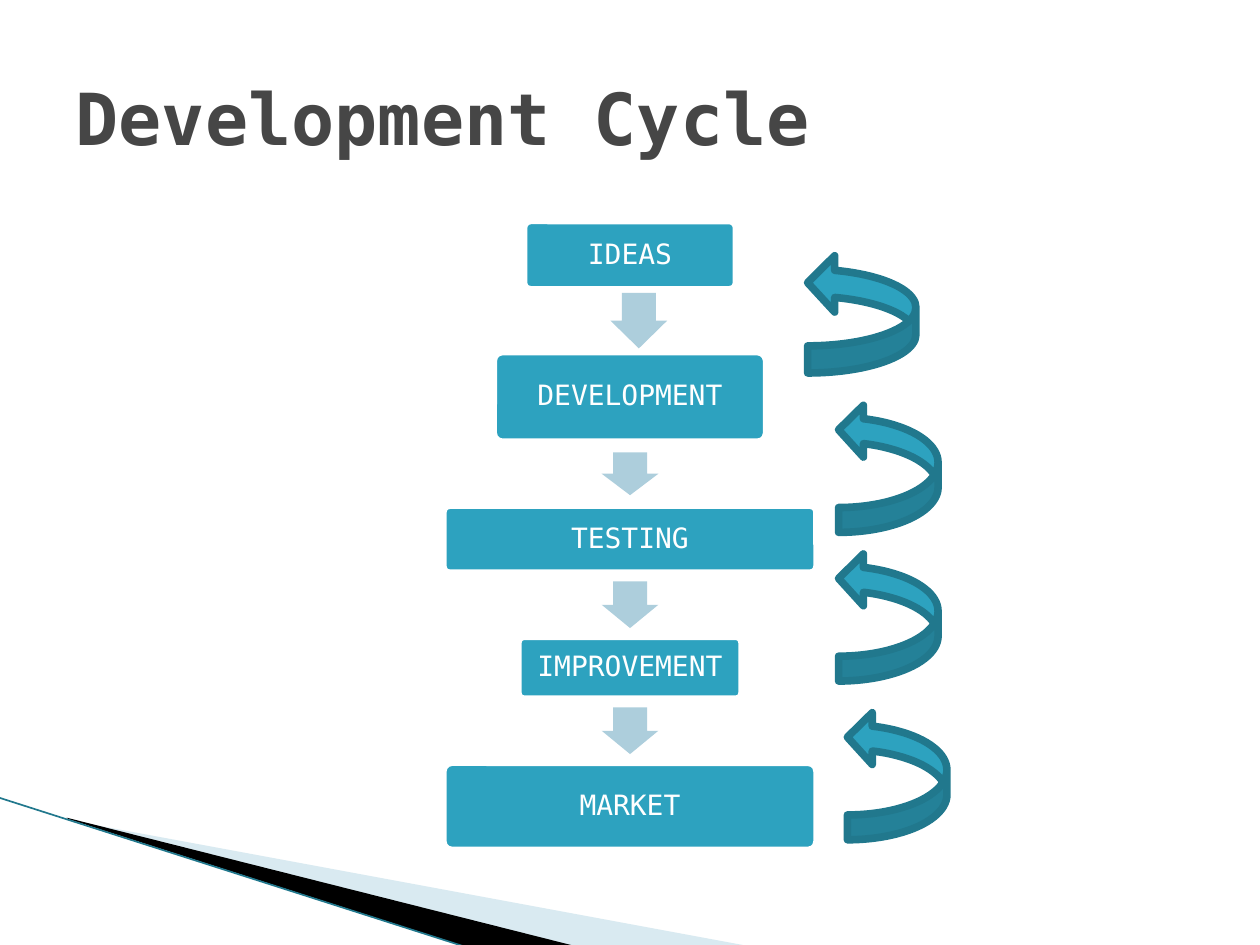
from itertools import pairwise

from lxml.etree import SubElement
from pptx import Presentation
from pptx.dml.color import RGBColor
from pptx.enum.shapes import MSO_CONNECTOR as Connector, MSO_SHAPE as Preset
from pptx.enum.text import MSO_ANCHOR as Anchor, PP_ALIGN as Align
from pptx.oxml.ns import qn
from pptx.util import Inches, Pt

TEAL = RGBColor(0x2D, 0xA2, 0xBF)
DARK_TEAL = RGBColor(0x21, 0x78, 0x8D)
PALE_TEAL = RGBColor(0xAD, 0xCE, 0xDC)
MIST = RGBColor(0xA0, 0xCB, 0xDC)
GREY = RGBColor(0x46, 0x46, 0x46)
BLACK = RGBColor(0, 0, 0)
WHITE = RGBColor(0xFF, 0xFF, 0xFF)

MIDDLE = 50
STAGES = [
    ("IDEAS", 17.5, 16.9, 5.5),
    ("DEVELOPMENT", 27.9, 21.7, 7.2),
    ("TESTING", 40.1, 29.7, 5.4),
    ("IMPROVEMENT", 50.5, 17.8, 5),
    ("MARKET", 60.5, 29.7, 7),
]
STEP_ARROWS = [(50.7, 4.4), (MIDDLE, 3.4), (MIDDLE, 3.7), (MIDDLE, 3.7)]
RETURN_ARROWS = [
    (68.4, 24.9, 9.4, 8.6),
    (70.5, 37.15, 10.2, 7.9),
    (70.5, 48.95, 10.2, 7.9),
    (71.2, 61.55, 10.2, 7.9),
]


class CycleSlide:
    """Draws styled elements on a grid of 100 columns and 75 rows."""

    font_name = "DejaVu Sans Mono"
    outline = Pt(4.33)

    def __init__(self, presentation):
        self.unit = presentation.slide_width / 100
        self.slide = presentation.slides.add_slide(presentation.slide_layouts[5])

    def grid(self, *lengths):
        return [round(length * self.unit) for length in lengths]

    def label(self, shape, text, size, color, align, bold=False):
        frame = shape.text_frame
        frame.text = text
        frame.word_wrap = True
        frame.vertical_anchor = Anchor.MIDDLE
        paragraph = frame.paragraphs[0]
        paragraph.alignment = align
        font = paragraph.runs[0].font
        font.name, font.size, font.bold = self.font_name, Pt(size), bold
        font.color.rgb = color

    def paint(self, shape, fill, line=None):
        shape.shadow.inherit = False
        shape.fill.solid()
        shape.fill.fore_color.rgb = fill
        if line is None:
            shape.line.fill.background()
        else:
            shape.line.color.rgb = line
            shape.line.width = self.outline

    def preset(self, kind, center, middle, width, height, adjustments):
        box = self.grid(center - width / 2, middle - height / 2, width, height)
        shape = self.slide.shapes.add_shape(kind, *box)
        for index, value in enumerate(adjustments):
            shape.adjustments[index] = value
        return shape

    def title(self, text):
        title = self.slide.shapes.title
        title.left, title.top, title.width, title.height = self.grid(5, 3, 90, 12.5)
        self.label(title, text, 41, GREY, Align.LEFT, bold=True)

    def stage(self, text, top, width, height):
        shape = self.preset(Preset.ROUNDED_RECTANGLE, MIDDLE, top + height / 2,
                            width, height, [0.1])
        self.paint(shape, TEAL, WHITE)
        self.label(shape, text, 16, WHITE, Align.CENTER)
        frame = shape.text_frame
        frame.margin_left = frame.margin_right = Inches(0.07)
        frame.margin_top = frame.margin_bottom = Inches(0.07)
        frame.paragraphs[0].line_spacing = 0.9

    def step_arrow(self, center, middle, length):
        shape = self.preset(Preset.RIGHT_ARROW, center, middle, length, 4.5, [0.6, 0.5])
        shape.rotation = 90
        self.paint(shape, PALE_TEAL)

    def return_arrow(self, center, middle, width, height):
        shape = self.preset(Preset.CURVED_UP_ARROW, center, middle, width, height,
                            [0.25, 0.52, 0.25])
        shape.rotation = 270
        self.paint(shape, TEAL, DARK_TEAL)

    def wedge(self, points, fill, opacity=100):
        start, *others = [self.grid(*point) for point in points]
        builder = self.slide.shapes.build_freeform(*start)
        builder.add_line_segments(others, close=True)
        shape = builder.convert_to_shape()
        self.paint(shape, fill)
        if opacity < 100:
            color = shape._element.spPr.find(qn("a:solidFill"))[0]
            SubElement(color, qn("a:alpha"), val=str(opacity * 1000))

    def edge(self, start, end):
        line = self.slide.shapes.add_connector(
            Connector.STRAIGHT, *self.grid(*start, *end))
        line.line.color.rgb = DARK_TEAL
        line.line.width = Pt(0.95)
        SubElement(line._element.spPr, qn("a:effectLst"))


def main():
    presentation = Presentation()
    presentation.slide_width, presentation.slide_height = Inches(10), Inches(7.5)
    cycle = CycleSlide(presentation)
    cycle.wedge([(5.5, 65.1), (59.5, 75.1), (45.6, 75.1), (5.5, 65)], MIST, 40)
    cycle.wedge([(5.3, 64.9), (45.7, 75.1), (37.2, 75.2), (5.4, 65)], BLACK)
    cycle.edge((-0.1, 63.3), (37.1, 75.2))
    cycle.title("Development Cycle")
    for stage in STAGES:
        cycle.stage(*stage)
    for (upper, lower), (center, length) in zip(pairwise(STAGES), STEP_ARROWS):
        cycle.step_arrow(center, (upper[1] + upper[3] + lower[1]) / 2, length)
    for arrow in RETURN_ARROWS:
        cycle.return_arrow(*arrow)
    presentation.save("out.pptx")


if __name__ == "__main__":
    main()
